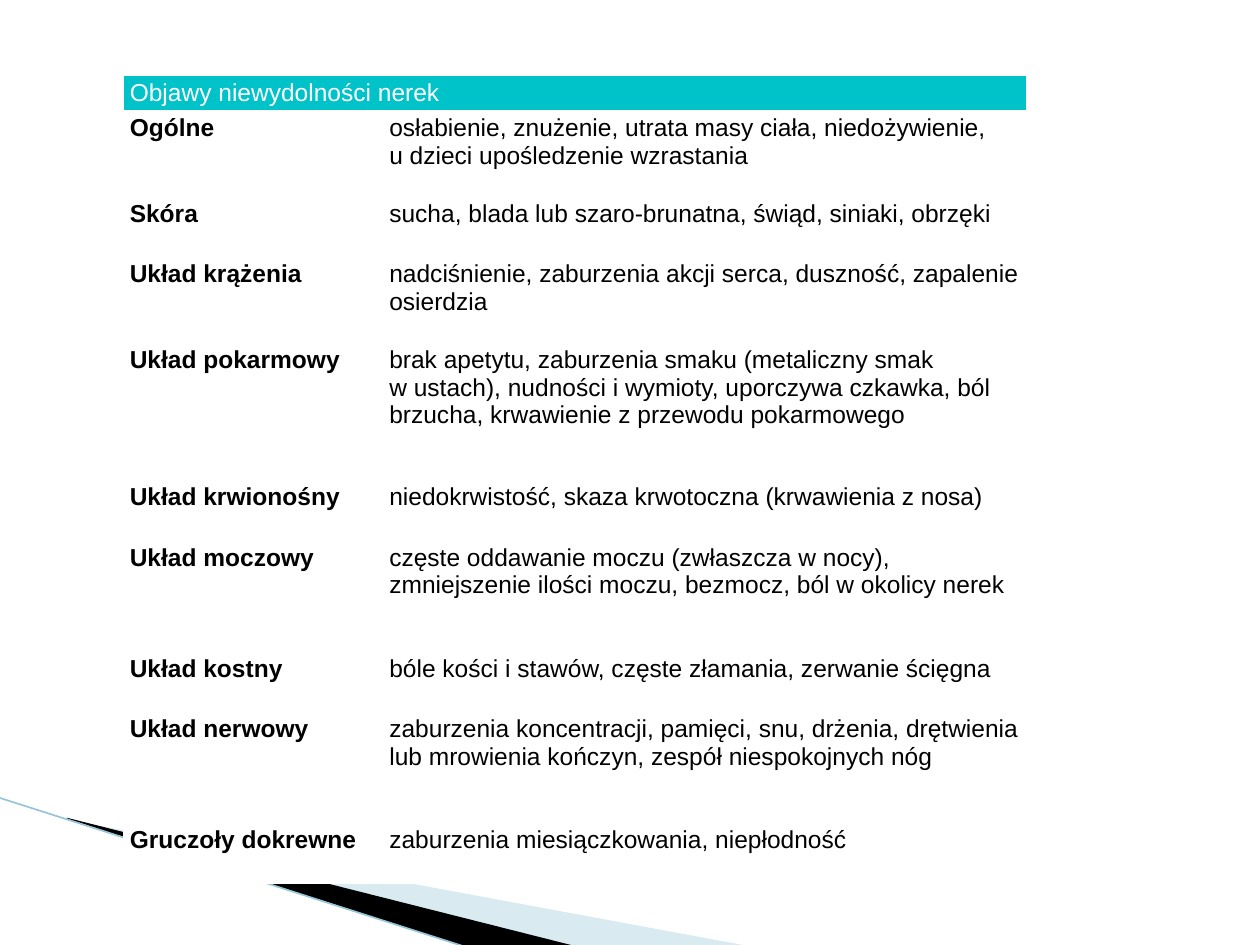
import pptx
import pptx.util
import pptx.dml.color
import pptx.enum.shapes
import pptx.enum.text
import pptx.oxml
import pptx.oxml.ns

Inches = pptx.util.Inches
COLORS = {
    "head": "00C2C9",
    "white": "FFFFFF",
    "black": "000000",
    "pale": "A0CBDC",
    "edge": "97C5D8",
}
HEAD = "Objawy niewydolności nerek"
HARD = chr(160)
ROWS = [
    (0.68, "Ogólne", "osłabienie, znużenie, utrata masy ciała, niedożywienie, u~dzieci upośledzenie wzrastania"),
    (0.48, "Skóra", "sucha, blada lub szaro-brunatna, świąd, siniaki, obrzęki"),
    (0.68, "Układ krążenia", "nadciśnienie, zaburzenia akcji serca, duszność, zapalenie osierdzia"),
    (1.09, "Układ pokarmowy", "brak apetytu, zaburzenia smaku (metaliczny smak w~ustach), nudności i~wymioty, "
                              "uporczywa czkawka, ból brzucha, krwawienie z~przewodu pokarmowego"),
    (0.48, "Układ krwionośny", "niedokrwistość, skaza krwotoczna (krwawienia z~nosa)"),
    (0.88, "Układ moczowy", "częste oddawanie moczu (zwłaszcza w~nocy), zmniejszenie ilości moczu, "
                            "bezmocz, ból w~okolicy nerek"),
    (0.48, "Układ kostny", "bóle kości i~stawów, częste złamania, zerwanie ścięgna"),
    (0.88, "Układ nerwowy", "zaburzenia koncentracji, pamięci, snu, drżenia, drętwienia lub mrowienia kończyn, "
                            "zespół niespokojnych nóg"),
    (0.48, "Gruczoły dokrewne", "zaburzenia miesiączkowania, niepłodność"),
]


def tint(name):
    return pptx.dml.color.RGBColor.from_string(COLORS[name])


def add_wedge(slide, points, color, alpha=None):
    spots = [(Inches(x), Inches(y)) for x, y in points]
    form = slide.shapes.build_freeform(*spots[0])
    form.add_line_segments(spots[1:], close=True)
    wedge = form.convert_to_shape()
    wedge.shadow.inherit = False
    wedge.fill.solid()
    wedge.fill.fore_color.rgb = tint(color)
    wedge.line.fill.background()
    if alpha is not None:
        node = next(wedge.element.spPr.iter(pptx.oxml.ns.qn("a:srgbClr")))
        pptx.oxml.ns.qn("a:alpha")
        child = node.makeelement(pptx.oxml.ns.qn("a:alpha"), {"val": str(alpha * 1000)})
        node.append(child)


def add_swoosh(slide, left, top, width, height):
    right, base = left + width, top + height
    add_wedge(slide, [(left + 0.56, top + 0.18), (right, base - 0.01),
                      (right - 1.39, base - 0.01), (left + 0.56, top + 0.17)], "pale", 40)
    add_wedge(slide, [(left + 0.54, top + 0.16), (left + 4.58, base - 0.01),
                      (left + 3.73, base), (left + 0.55, top + 0.17)], "black")
    edge = slide.shapes.add_connector(
        pptx.enum.shapes.MSO_CONNECTOR.STRAIGHT,
        Inches(left), Inches(top), Inches(left + 3.72), Inches(base))
    edge.line.color.rgb = tint("edge")
    edge.line.width = pptx.util.Pt(0.95)
    props = edge.element.spPr
    props.append(props.makeelement(pptx.oxml.ns.qn("a:effectLst"), {}))


def fill_cell(cell, text, fill="white", color="black", bold=False):
    cell.fill.solid()
    cell.fill.fore_color.rgb = tint(fill)
    cell.margin_left = cell.margin_right = Inches(0.05)
    cell.margin_top = cell.margin_bottom = Inches(0.03)
    run = cell.text_frame.paragraphs[0].add_run()
    run.text = text.replace("~", HARD)
    run.font.name = "Arial"
    run.font.size = pptx.util.Pt(14)
    run.font.bold = bold
    run.font.color.rgb = tint(color)


def add_signs(slide, left, top, width, height):
    frame = slide.shapes.add_table(len(ROWS) + 1, 2, Inches(left), Inches(top),
                                   Inches(width), Inches(height))
    table = frame.table
    table.horz_banding = False
    table.first_row = False
    table.columns[0].width = Inches(2.06)
    table.columns[1].width = Inches(width - 2.06)
    table.rows[0].height = Inches(0.27)
    title = table.cell(0, 0)
    title.merge(table.cell(0, 1))
    title.vertical_anchor = pptx.enum.text.MSO_ANCHOR.MIDDLE
    fill_cell(title, HEAD, "head", "white")
    for index, (tall, organ, signs) in enumerate(ROWS, 1):
        table.rows[index].height = Inches(tall)
        fill_cell(table.cell(index, 0), organ, bold=True)
        fill_cell(table.cell(index, 1), signs)


def main():
    deck = pptx.Presentation()
    deck.slide_width = Inches(10)
    deck.slide_height = Inches(7.5)
    slide = deck.slides.add_slide(deck.slide_layouts[6])
    add_swoosh(slide, -0.01, 6.33, 5.96, 1.19)
    add_signs(slide, 0.98, 0.6, 7.17, 6.4)
    deck.save("out.pptx")


if __name__ == "__main__":
    main()
